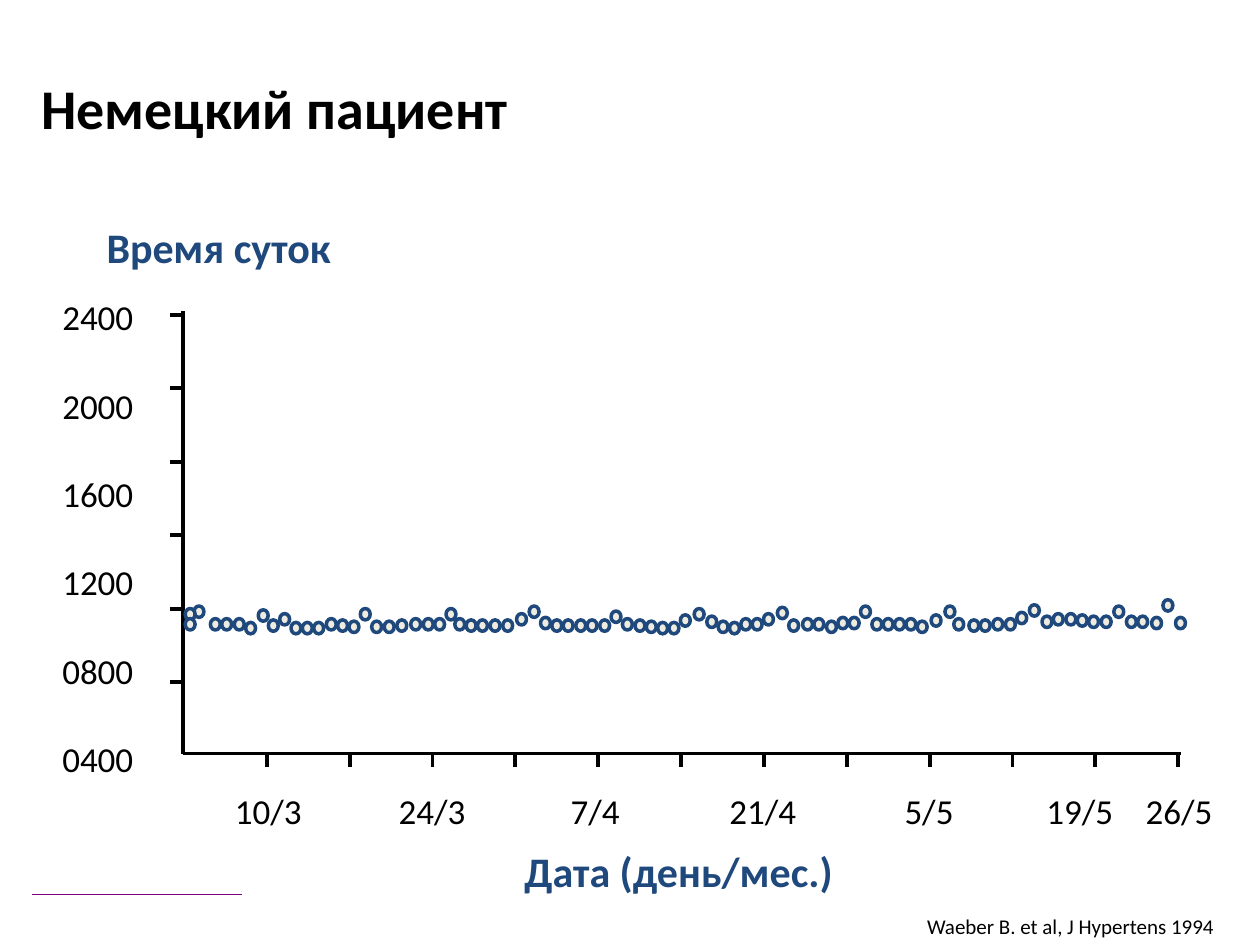
"""Build a slide that plots the time of each dose over the dates."""
from lxml import etree
from pptx import Presentation
from pptx.dml.color import RGBColor
from pptx.enum.shapes import MSO_CONNECTOR, MSO_SHAPE
from pptx.enum.text import MSO_ANCHOR, MSO_AUTO_SIZE, PP_ALIGN
from pptx.oxml.ns import qn
from pptx.util import Cm, Pt

BLACK = RGBColor(0x00, 0x00, 0x00)
BLUE = RGBColor(0x1F, 0x49, 0x7D)
CREAM = RGBColor(0xEE, 0xEC, 0xE1)
PURPLE = RGBColor(0x80, 0x00, 0x80)
LINE, OVAL = MSO_CONNECTOR.STRAIGHT, MSO_SHAPE.OVAL
TOP, FIT, NO_FIT = MSO_ANCHOR.TOP, MSO_AUTO_SIZE.SHAPE_TO_FIT_TEXT, MSO_AUTO_SIZE.NONE
LEFT, MID, RIGHT, JUST = PP_ALIGN.LEFT, PP_ALIGN.CENTER, PP_ALIGN.RIGHT, PP_ALIGN.JUSTIFY
FONT = "Calibri"

HOURS = ("2400", "2000", "1600", "1200", "0800", "0400")
DATES = (("10/3", 5.41), ("24/3", 8.71), ("7/4", 12.0), ("21/4", 15.38),
         ("5/5", 18.73), ("19/5", 21.77), ("26/5", 23.77))
UNIT = 0.0254
DOT_X = (
    167, 176, 186, 195, 205, 213, 222, 231, 240, 249, 259, 268, 277, 286,
    295, 305, 315, 326, 336, 345, 354, 361, 370, 379, 389, 399, 410, 420,
    429, 438, 447, 457, 466, 476, 485, 494, 504, 513, 522, 531, 540, 551,
    561, 570, 579, 588, 597, 606, 617, 626, 637, 646, 656, 665, 674, 683,
    692, 701, 710, 719, 728, 739, 750, 757, 769, 778, 788, 798, 807, 817,
    827, 836, 846, 855, 864, 874, 884, 894, 903, 914, 923, 933, 154, 147, 147)
DOT_Y = (
    491, 491, 491, 494, 484, 492, 487, 494, 494, 494, 491, 492, 493, 483,
    493, 493, 492, 491, 491, 491, 483, 491, 492, 492, 492, 492, 487, 481,
    490, 492, 492, 492, 492, 492, 485, 491, 492, 493, 494, 494, 488, 483,
    489, 493, 494, 491, 491, 487, 482, 492, 491, 491, 493, 490, 490, 481,
    491, 491, 491, 491, 493, 488, 481, 491, 492, 492, 491, 491, 486, 480,
    489, 487, 487, 488, 489, 489, 481, 489, 489, 490, 476, 490, 481, 483, 491)


def write(frame, text, size, color=BLACK, bold=False, align=LEFT, space=1.0):
    """Put one formatted run into a text frame."""
    para = frame.paragraphs[0]
    para.alignment, para.line_spacing = align, space
    run = para.add_run()
    run.text = text
    font = run.font
    font.name, font.size, font.bold = FONT, Pt(size), bold
    font.color.rgb = color


def label(slide, text, box, size, wrap=False, **style):
    """Add a text box given in centimetres."""
    frame = slide.shapes.add_textbox(*map(Cm, box)).text_frame
    frame.word_wrap, frame.auto_size = wrap, FIT
    write(frame, text, size, **style)


def head(slide, text):
    """Move and fill the title placeholder."""
    title = slide.shapes.title
    title.left, title.top, title.width, title.height = map(Cm, (0.58, 1.35, 16.79, 1.6))
    frame = title.text_frame
    frame.vertical_anchor, frame.word_wrap, frame.auto_size = TOP, True, NO_FIT
    write(frame, text, 32, bold=True)


def rule(slide, ends, width=2.25, color=BLACK):
    """Draw a straight line without a shadow."""
    line = slide.shapes.add_connector(LINE, *map(Cm, ends))
    line.line.width, line.line.color.rgb = Pt(width), color
    etree.SubElement(line._element.spPr, qn("a:effectLst"))


def dot(slide, x, y):
    """Draw one open data point."""
    mark = slide.shapes.add_shape(OVAL, Cm(x), Cm(y), Cm(0.2), Cm(0.23))
    mark.shadow.inherit = False
    mark.fill.solid()
    mark.fill.fore_color.rgb = CREAM
    mark.line.color.rgb, mark.line.width = BLUE, Pt(2)


def axes(slide):
    """Draw both axes with their ticks and labels."""
    for i, hour in enumerate(HOURS):
        y = 6.35 + 1.48 * i
        rule(slide, (3.43, y, 3.71, y))
        label(slide, hour, (0.86, 5.84 + 1.78 * i, 2.08, 1.09), 20, align=RIGHT)
    for i in range(12):
        x = 5.38 + 1.67 * i
        rule(slide, (x, 15.16, x, 15.47))
    for date, x in DATES:
        label(slide, date, (x - 0.94, 15.8, 1.88, 1.09), 20, align=MID)
    rule(slide, (3.68, 15.19, 23.8, 15.19))
    rule(slide, (3.68, 15.19, 3.68, 6.27))


def main():
    """Build and save the slide."""
    deck = Presentation()
    deck.slide_width, deck.slide_height = Cm(25.4), Cm(19.05)
    slide = deck.slides.add_slide(deck.slide_layouts[5])
    head(slide, "Немецкий пациент")
    name = {"wrap": True, "color": BLUE, "bold": True, "space": 0.9}
    label(slide, "Время суток", (1.9, 4.45, 6.5, 1.17), 24, align=JUST, **name)
    label(slide, "Дата (день/мес.)", (8.46, 17.04, 10.44, 1.17), 24, align=MID, **name)
    axes(slide)
    for x, y in zip(DOT_X, DOT_Y):
        dot(slide, x * UNIT, y * UNIT)
    label(slide, "Waeber B. et al, J Hypertens 1994", (18.44, 18.29, 6.96, 0.76), 12)
    rule(slide, (0.64, 18.03, 4.88, 18.03), 1, PURPLE)
    deck.save("out.pptx")


if __name__ == "__main__":
    main()
